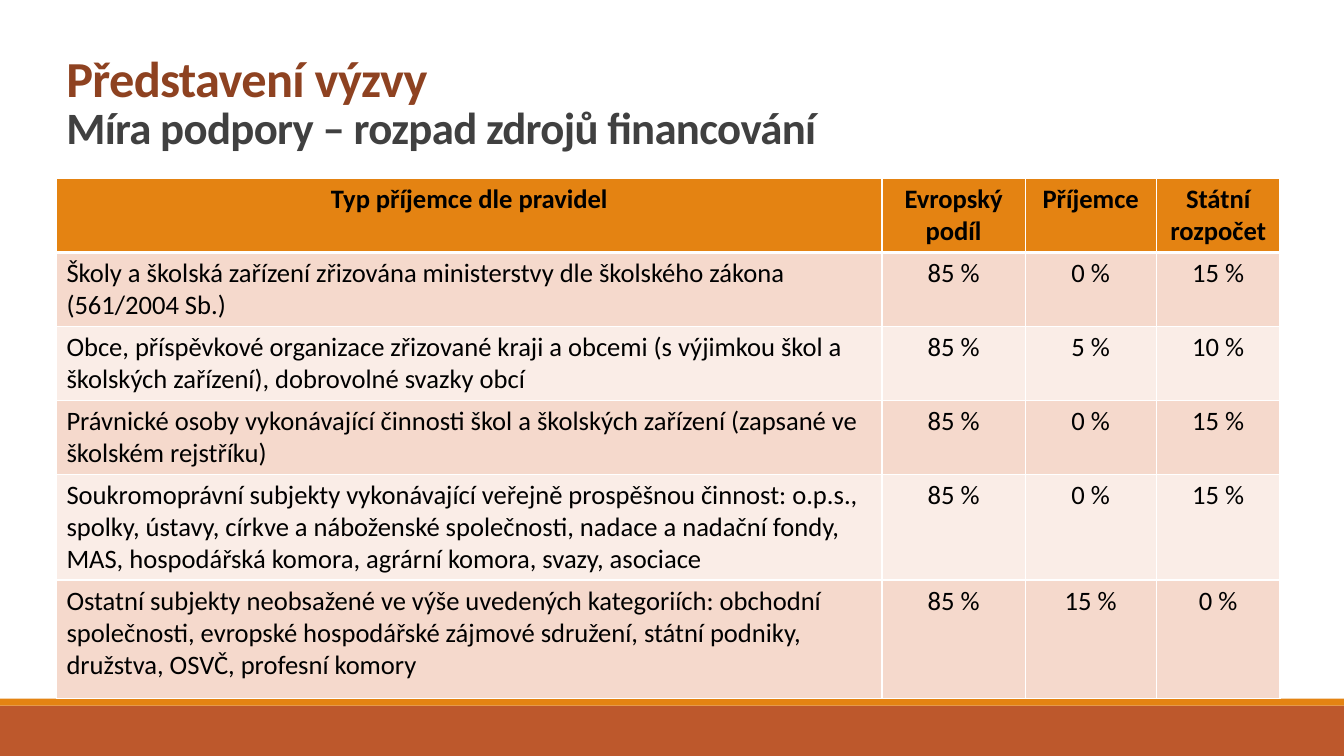
from dataclasses import dataclass

from lxml import etree
from pptx import Presentation
from pptx.dml import color
from pptx.enum import shapes, text
from pptx.oxml import ns
from pptx.util import Inches, Pt

WIDE, HIGH = Inches(13.33), Inches(7.5)
FONT = "Calibri"
ORANGE, WHITE = "E48312", "FFFFFF"
BANDS = ("F5D9CC", "FAEDE7")


@dataclass
class Box:
    """Place and size in percent of the slide."""
    x: float
    y: float
    w: float
    h: float

    def area(self) -> tuple[int, int, int, int]:
        return across(self.x), down(self.y), across(self.w), down(self.h)


@dataclass
class Bar:
    box: Box
    fill: str


@dataclass
class Row:
    high: float
    label: str
    shares: tuple[str, str, str]


# Content
TITLE = Box(4.2, 5.2, 86.4, 15.73)
GRID = Box(4.2, 23.6, 91.05, 68.8)
COLS = (61.43, 10.65, 9.75, 9.22)
BARS = (
    Bar(Box(0, 93.33, 100, 6.67), "BD582C"),
    Bar(Box(0, 92.4, 100, 0.93), ORANGE),
)
ROWS = (
    Row(8.93, "Typ příjemce dle pravidel",
        ("Evropský podíl", "Příjemce", "Státní rozpočet")),
    Row(8.93, "Školy a školská zařízení zřizována ministerstvy dle školského "
        "zákona (561/2004 Sb.)", ("85 %", "0 %", "15 %")),
    Row(8.93, "Obce, příspěvkové organizace zřizované kraji a obcemi (s výjimkou "
        "škol a školských zařízení), dobrovolné svazky obcí",
        ("85 %", "5 %", "10 %")),
    Row(8.93, "Právnické osoby vykonávající činnosti škol a školských zařízení "
        "(zapsané ve školském rejstříku)", ("85 %", "0 %", "15 %")),
    Row(12.67, "Soukromoprávní subjekty vykonávající veřejně prospěšnou činnost: "
        "o.p.s., spolky, ústavy, církve a náboženské společnosti, nadace a nadační "
        "fondy, MAS, hospodářská komora, agrární komora, svazy, asociace",
        ("85 %", "0 %", "15 %")),
    Row(15.73, "Ostatní subjekty neobsažené ve výše uvedených kategoriích: obchodní "
        "společnosti, evropské hospodářské zájmové sdružení, státní podniky, "
        "družstva, OSVČ, profesní komory", ("85 %", "15 %", "0 %")),
)


def across(share: float) -> int:
    return round(WIDE * share / 100)


def down(share: float) -> int:
    return round(HIGH * share / 100)


def rgb(code: str) -> color.RGBColor:
    return color.RGBColor.from_string(code)


def write(para, words: str, *, size: float, ink: str = "000000",
          bold: bool = False, space: float = 0) -> None:
    run = para.add_run()
    run.text = words
    font = run.font
    font.name, font.size, font.bold = FONT, Pt(size), bold
    font.color.rgb = rgb(ink)
    if space:
        font._element.set("spc", str(round(space * 100)))


def draw_bar(slide, bar: Bar) -> None:
    shape = slide.shapes.add_shape(shapes.MSO_SHAPE.RECTANGLE, *bar.box.area())
    shape.shadow.inherit = False
    shape.fill.solid()
    shape.fill.fore_color.rgb = rgb(bar.fill)
    shape.line.fill.background()


def draw_title(slide) -> None:
    frame = slide.shapes.add_textbox(*TITLE.area()).text_frame
    frame.word_wrap = True
    frame.vertical_anchor = text.MSO_ANCHOR.BOTTOM
    para = frame.paragraphs[0]
    para.line_spacing = 0.85
    write(para, "Představení výzvy", size=36, ink="8E4221", bold=True, space=-0.5)
    para.add_line_break()
    write(para, "Míra podpory – rozpad zdrojů financování", size=32,
          ink="404040", bold=True, space=-0.5)


def edge(cell, side: str, width: float) -> None:
    props = cell._tc.get_or_add_tcPr()
    line = etree.SubElement(props, ns.qn(f"a:ln{side}"), w=str(Pt(width)))
    fill = etree.SubElement(line, ns.qn("a:solidFill"))
    etree.SubElement(fill, ns.qn("a:srgbClr"), val=WHITE)


def draw_cell(cell, words: str, row: int, col: int) -> None:
    head = row == 0
    # Borders come before the fill in the cell's XML
    for side in "LRTB":
        thick = (row, side) in ((0, "B"), (1, "T"))
        edge(cell, side, 3 if thick else 1)
    cell.fill.solid()
    cell.fill.fore_color.rgb = rgb(ORANGE if head else BANDS[(row - 1) % 2])
    para = cell.text_frame.paragraphs[0]
    if head or col:
        para.alignment = text.PP_ALIGN.CENTER
    write(para, words, size=19, bold=head)


def draw_table(slide) -> None:
    table = slide.shapes.add_table(len(ROWS), len(COLS), *GRID.area()).table
    for col, wide in zip(table.columns, COLS):
        col.width = across(wide)
    for r, row in enumerate(ROWS):
        table.rows[r].height = down(row.high)
        for c, words in enumerate((row.label, *row.shares)):
            draw_cell(table.cell(r, c), words, r, c)


def main() -> None:
    deck = Presentation()
    deck.slide_width, deck.slide_height = WIDE, HIGH
    slide = deck.slides.add_slide(deck.slide_layouts[6])
    # Footer bars, then title and table on top
    for bar in BARS:
        draw_bar(slide, bar)
    draw_title(slide)
    draw_table(slide)
    deck.save("out.pptx")


if __name__ == "__main__":
    main()
